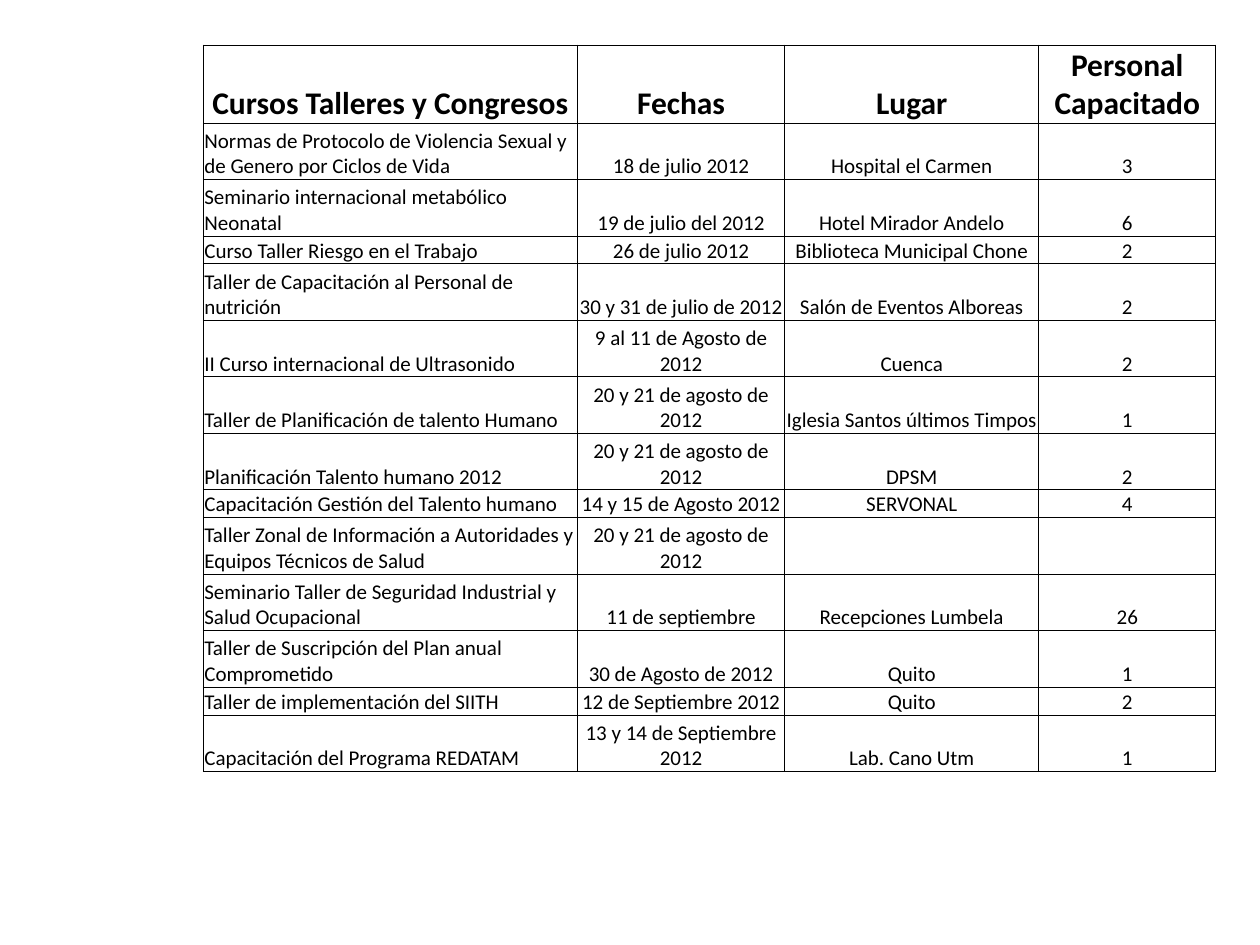
"""Build a slide with the table of courses, workshops and congresses."""
import pptx
import pptx.dml.color
import pptx.enum.text
import pptx.oxml
import pptx.oxml.ns
import pptx.util

Cm, Pt = pptx.util.Cm, pptx.util.Pt
Align = pptx.enum.text.PP_ALIGN
Anchor = pptx.enum.text.MSO_ANCHOR

theme = {
    "font": "Calibri",
    "ink": "000000",
    "head": Pt(18),
    "body": Pt(12),
    "line": Pt(0.5),
}

rows = [
    ("Cursos Talleres y Congresos", "Fechas", "Lugar", "Personal Capacitado"),
    ("Normas de Protocolo de Violencia Sexual y de Genero por Ciclos de Vida",
     "18 de julio 2012", "Hospital el Carmen", "3"),
    ("Seminario internacional metabólico Neonatal",
     "19 de julio del 2012", "Hotel Mirador Andelo", "6"),
    ("Curso Taller Riesgo en el Trabajo",
     "26 de julio 2012", "Biblioteca Municipal Chone", "2"),
    ("Taller de Capacitación al Personal de nutrición",
     "30 y 31 de julio de 2012", "Salón de Eventos Alboreas", "2"),
    ("II Curso internacional de Ultrasonido",
     "9 al 11 de Agosto de 2012", "Cuenca", "2"),
    ("Taller de Planificación de talento Humano",
     "20 y 21 de agosto de 2012", "Iglesia Santos últimos Timpos", "1"),
    ("Planificación Talento humano 2012",
     "20 y 21 de agosto de 2012", "DPSM", "2"),
    ("Capacitación Gestión del Talento humano",
     "14 y 15 de Agosto 2012", "SERVONAL", "4"),
    ("Taller Zonal de Información a Autoridades y Equipos Técnicos de Salud",
     "20 y 21 de agosto de 2012", "", ""),
    ("Seminario Taller de Seguridad Industrial y Salud Ocupacional",
     "11 de septiembre", "Recepciones Lumbela", "26"),
    ("Taller de Suscripción del Plan anual Comprometido",
     "30 de Agosto de 2012", "Quito", "1"),
    ("Taller de implementación del SIITH",
     "12 de Septiembre 2012", "Quito", "2"),
    ("Capacitación del Programa REDATAM",
     "13 y 14 de Septiembre 2012", "Lab. Cano Utm", "1"),
]
widths = [7.54, 4.18, 5.12, 3.57]
short = {3, 8, 12}
heights = [1.3] + [0.56 if i in short else 1.14 for i in range(1, len(rows))]
layout = {
    "margin_left": Cm(0.02),
    "margin_right": Cm(0.02),
    "margin_top": Cm(0.02),
    "margin_bottom": 0,
    "vertical_anchor": Anchor.BOTTOM,
}


def apply(item, values):
    for name, value in values.items():
        setattr(item, name, value)


def border(cell):
    props = cell._tc.get_or_add_tcPr()
    for side in "LRTB":
        props.append(pptx.oxml.parse_xml(
            f'<a:ln{side} {pptx.oxml.ns.nsdecls("a")} w="{theme["line"]}">'
            f'<a:solidFill><a:srgbClr val="{theme["ink"]}"/></a:solidFill>'
            f'</a:ln{side}>'))


deck = pptx.Presentation()
apply(deck, {"slide_width": Cm(25.4), "slide_height": Cm(19.05)})
slide = deck.slides.add_slide(deck.slide_layouts[6])
table = slide.shapes.add_table(
    len(rows), len(widths), Cm(4.1), Cm(0.91),
    Cm(sum(widths)), Cm(sum(heights))).table
apply(table, {"first_row": False, "horz_banding": False})
for column, width in zip(table.columns, widths):
    column.width = Cm(width)

for r, (row, height) in enumerate(zip(rows, heights)):
    table.rows[r].height = Cm(height)
    for c, words in enumerate(row):
        cell = table.cell(r, c)
        apply(cell, layout)
        border(cell)
        cell.fill.background()
        if not words:
            continue
        para = cell.text_frame.paragraphs[0]
        para.alignment = Align.LEFT if r and c == 0 else Align.CENTER
        run = para.add_run()
        run.text = words
        apply(run.font, {
            "name": theme["font"],
            "size": theme["body"] if r else theme["head"],
            "bold": r == 0,
        })
        run.font.color.rgb = pptx.dml.color.RGBColor.from_string(theme["ink"])

deck.save("out.pptx")
